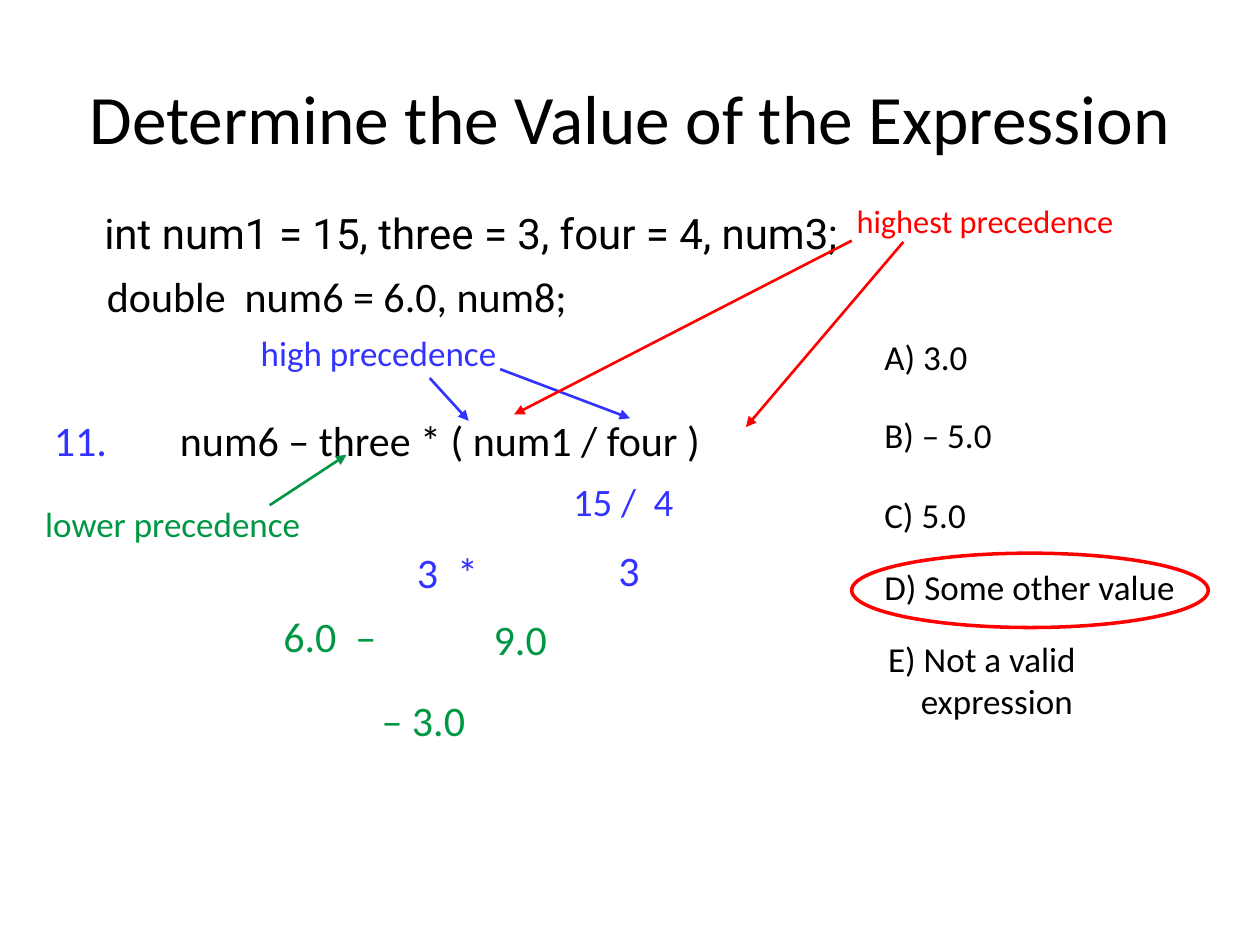
from lxml import etree
from pptx import Presentation
from pptx.dml.color import RGBColor
from pptx.enum.shapes import MSO_CONNECTOR, MSO_SHAPE
from pptx.enum.text import MSO_ANCHOR, PP_ALIGN
from pptx.oxml.ns import qn
from pptx.util import Inches, Pt

STRAIGHT, OVAL = MSO_CONNECTOR.STRAIGHT, MSO_SHAPE.OVAL
LEFT, CENTER = PP_ALIGN.LEFT, PP_ALIGN.CENTER
TOP, MIDDLE = MSO_ANCHOR.TOP, MSO_ANCHOR.MIDDLE
BLACK = RGBColor(0x00, 0x00, 0x00)
BLUE = RGBColor(0x33, 0x33, 0xFF)
GREEN = RGBColor(0x00, 0x96, 0x44)
RED = RGBColor(0xFF, 0x00, 0x00)
SLIDE_W, SLIDE_H = Inches(10), Inches(7.5)
COL, ROW = SLIDE_W / 100, SLIDE_H / 75
LINE_H = 5.3
OPTION_COL = 69.2


def grid(col, row):
    """Turn a column and a row of the slide grid into lengths."""
    return round(col * COL), round(row * ROW)


def add_text(s, text, col, row, cols, rows=LINE_H, size=24, color=BLACK,
             font="Calibri", align=LEFT, anchor=TOP):
    """Add a wrapped one-paragraph text box and return its paragraph."""
    tf = s.shapes.add_textbox(*grid(col, row), *grid(cols, rows)).text_frame
    tf.word_wrap = True
    tf.vertical_anchor = anchor
    p = tf.paragraphs[0]
    p.text = text
    p.alignment = align
    style_run(p.runs[0], size, color, font)
    return p


def style_run(r, size, color, font="Calibri"):
    """Set the size, colour and typeface of a run."""
    r.font.size = Pt(size)
    r.font.color.rgb = color
    r.font.name = font


def add_arrow(s, start, end, color):
    """Add a straight arrow between two grid points."""
    line = s.shapes.add_connector(STRAIGHT, *grid(*start), *grid(*end))
    line.line.color.rgb = color
    line.line.width = Pt(1.5)
    etree.SubElement(line.line._get_or_add_ln(), qn("a:tailEnd"), type="triangle")
    etree.SubElement(line._element.spPr, qn("a:effectLst"))


def add_ring(s, col, row, cols, rows):
    """Add the outlined ellipse around the right answer."""
    sp = s.shapes.add_shape(OVAL, *grid(col, row), *grid(cols, rows))
    sp.shadow.inherit = False
    sp.fill.background()
    sp.line.color.rgb = RED
    sp.line.width = Pt(2)


def add_question(s):
    """Add the declarations and the numbered expression."""
    p = add_text(s, "int num1 = 15, three = 3, four = 4, num3;", 7.3, 15.8, 74.4,
                 font="Roboto")
    p.line_spacing = 1.05
    add_text(s, "double  num6 = 6.0, num8;", 7.5, 21, 73.8)
    p = add_text(s, "11.", 3.3, 32.4, 67.1, color=BLUE)
    r = p.add_run()
    r.text = "\tnum6 – three * ( num1 / four )"
    style_run(r, 24, BLACK)
    tabs = etree.SubElement(p._p.get_or_add_pPr(), qn("a:tabLst"))
    etree.SubElement(tabs, qn("a:tab"), pos=str(Inches(1)), algn="l")


def add_options(s):
    """Add the five answers and ring the right one."""
    options = [("A) 3.0", 26.1), ("B) – 5.0", 32.3), ("C) 5.0", 38.7),
               ("D) Some other value", 44.4)]
    for text, row in options:
        add_text(s, text, OPTION_COL, row, 28.3, size=20)
    p = add_text(s, "E) Not a valid expression", 69.5, 50.1, 28.3, 9.1, size=20)
    pPr = p._p.get_or_add_pPr()
    pPr.set("marL", str(Inches(0.26)))
    pPr.set("indent", str(Inches(-0.26)))
    add_ring(s, 67.6, 43.9, 28.3, 5.9)


def add_precedence(s):
    """Add the precedence labels and the arrows to their operators."""
    labels = [
        ("high precedence", 19.7, 25.8, 20, BLUE,
         [((34.1, 30), (37.2, 33.4)), ((39.7, 29.3), (50, 33.2))]),
        ("lower precedence", 2.6, 39.4, 20, GREEN,
         [((21.4, 40.1), (27.5, 36.1))]),
        ("highest precedence", 67, 15.5, 18.5, RED,
         [((67.6, 19.1), (40.8, 32.9)), ((71.7, 19.2), (59.2, 33.9))]),
    ]
    for text, col, row, size, color, arrows in labels:
        add_text(s, text, col, row, 23.1, size=size, color=color)
        for start, end in arrows:
            add_arrow(s, start, end, color)


def add_steps(s):
    """Add the intermediate results of the evaluation."""
    steps = [("15 /  4", 44.5, 37.4, 10.3, 22.2, BLUE),
             ("3", 48.1, 42.7, 5.9, 24, BLUE),
             ("3  *", 32.1, 42.9, 8, 24, BLUE),
             ("6.0  –", 21.5, 48, 11.2, 24, GREEN),
             ("9.0", 38.2, 48.2, 11.2, 24, GREEN),
             ("– 3.0", 29.3, 54.6, 11.2, 24, GREEN)]
    for text, col, row, cols, size, color in steps:
        add_text(s, text, col, row, cols, size=size, color=color)


def main():
    """Build the slide and save it."""
    prs = Presentation()
    prs.slide_width, prs.slide_height = SLIDE_W, SLIDE_H
    s = prs.slides.add_slide(prs.slide_layouts[6])
    add_text(s, "Determine the Value of the Expression", 5, 3, 90, 12.5,
             size=39.6, align=CENTER, anchor=MIDDLE)
    add_question(s)
    add_options(s)
    add_precedence(s)
    add_steps(s)
    prs.save("out.pptx")


if __name__ == "__main__":
    main()
